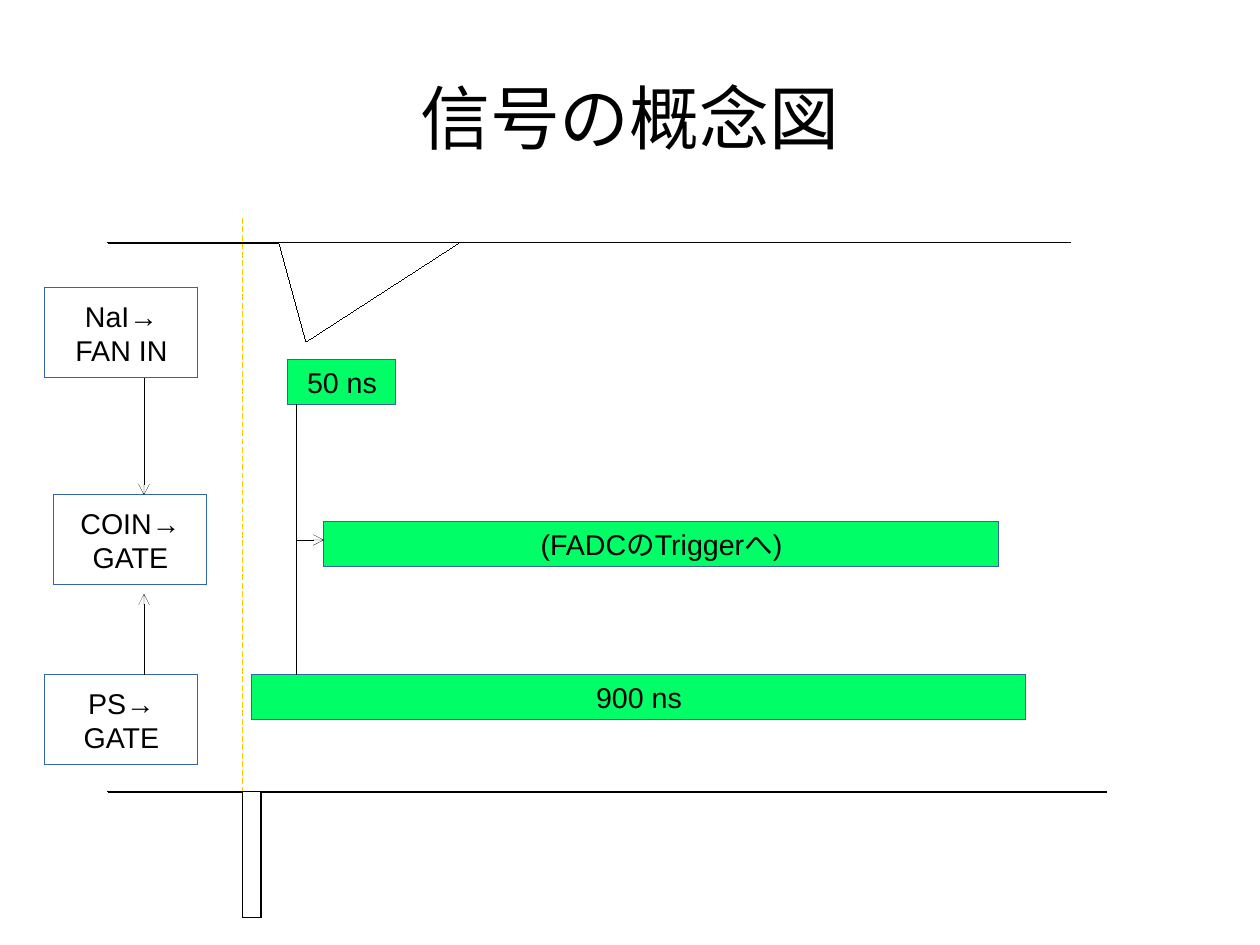
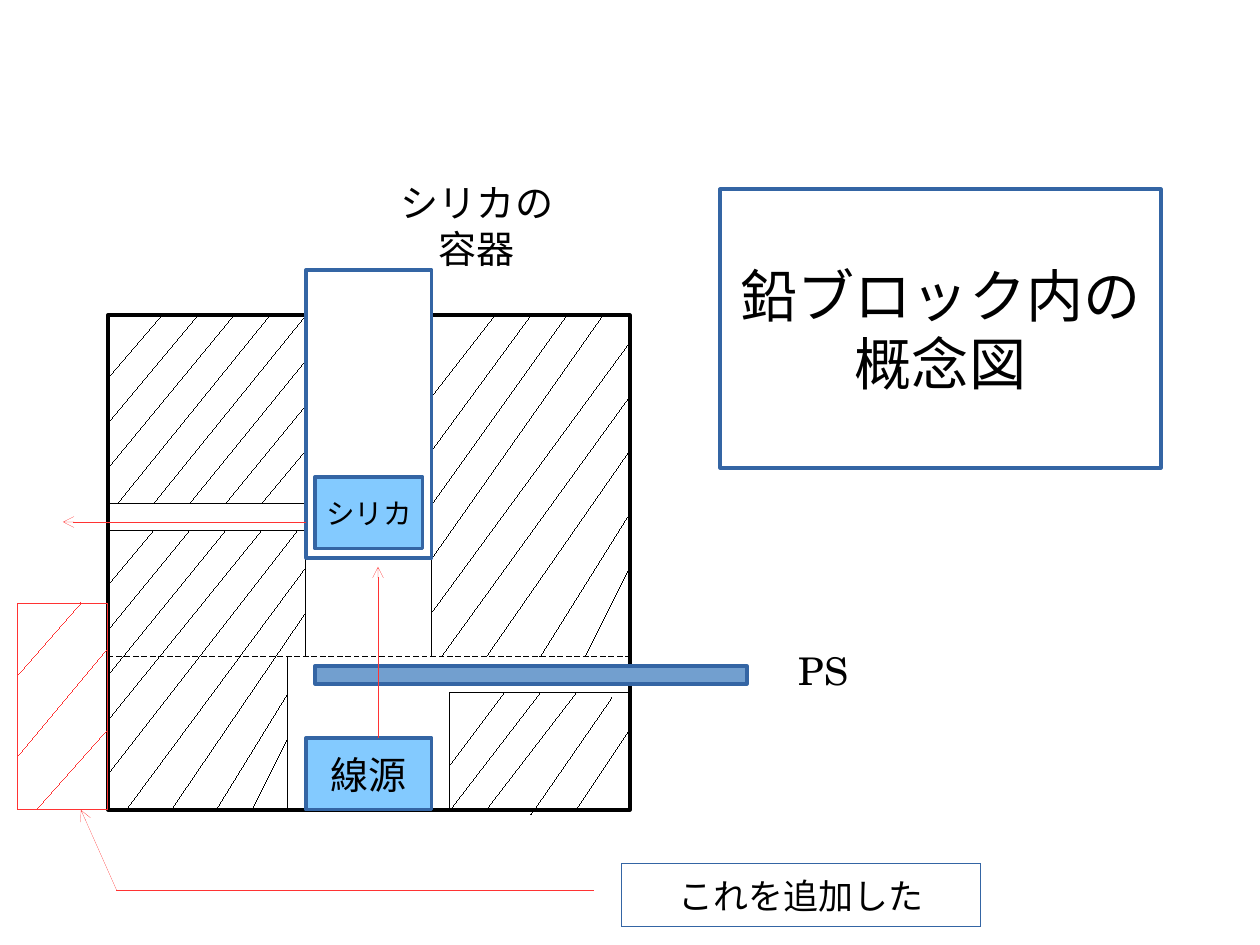
from dataclasses import dataclass

from lxml import etree
from pptx import Presentation
from pptx.dml.color import RGBColor
from pptx.enum.dml import MSO_LINE
from pptx.enum.shapes import MSO_CONNECTOR, MSO_SHAPE
from pptx.enum.text import MSO_ANCHOR, MSO_AUTO_SIZE, PP_ALIGN
from pptx.oxml.ns import qn
from pptx.util import Pt

GRID = 5.67  # drawing grid in points; both slides are laid out on it


@dataclass(frozen=True)
class Theme:
    black: str = "000000"
    white: str = "FFFFFF"
    border: str = "3465A4"
    gate: str = "00FF66"
    timing: str = "FFCC00"
    sample: str = "83CAFF"
    scintillator: str = "729FCF"
    added: str = "FF3333"
    sans: str = "Arial"
    serif: str = "TeX Gyre Schola"
    title: int = 44
    heading: int = 36
    label: int = 24
    note: int = 22
    body: int = 18
    hair: float = 0.01
    pulse: float = 1.5
    outline: float = 2


THEME = Theme()


def grid(*units):
    return [Pt(GRID * u) for u in units]


def write(tf, text, size=THEME.body, font=THEME.sans, color=THEME.black, wrap=False):
    """Fill a text frame with centred text, one paragraph per line."""
    tf.auto_size = MSO_AUTO_SIZE.NONE
    tf.word_wrap = wrap
    tf.vertical_anchor = MSO_ANCHOR.MIDDLE
    tf.margin_left = tf.margin_top = tf.margin_right = tf.margin_bottom = 0
    for i, line in enumerate(text.split("\n")):
        p = tf.paragraphs[0] if i == 0 else tf.add_paragraph()
        p.alignment = PP_ALIGN.CENTER
        r = p.add_run()
        r.text = line
        r.font.size = Pt(size)
        r.font.name = font
        r.font.color.rgb = RGBColor.from_string(color)


class Deck:
    """The presentation, its theme and the slide being drawn."""

    def __init__(self, theme):
        self.theme = theme
        self.prs = Presentation()
        self.prs.slide_width, self.prs.slide_height = grid(140, 105)
        self.s = None

    def new_slide(self):
        self.s = self.prs.slides.add_slide(self.prs.slide_layouts[5])

    def paint(self, sp, fill, line, width):
        if fill:
            sp.fill.solid()
            sp.fill.fore_color.rgb = RGBColor.from_string(fill)
        else:
            sp.fill.background()
        if line:
            sp.line.color.rgb = RGBColor.from_string(line)
            sp.line.width = Pt(width)
        else:
            sp.line.fill.background()

    def title(self, text, x, y, w, h, line=None, **fmt):
        sp = self.s.shapes.title
        sp.left, sp.top, sp.width, sp.height = grid(x, y, w, h)
        self.paint(sp, None, line, self.theme.outline)
        write(sp.text_frame, text, wrap=True, **fmt)

    def box(self, x, y, w, h, text="", fill=None, line=THEME.border,
            width=THEME.hair, **fmt):
        sp = self.s.shapes.add_shape(MSO_SHAPE.RECTANGLE, *grid(x, y, w, h))
        sp.shadow.inherit = False
        self.paint(sp, fill, line, width)
        if text:
            write(sp.text_frame, text, **fmt)

    def label(self, x, y, w, h, text, **fmt):
        sp = self.s.shapes.add_textbox(*grid(x, y, w, h))
        write(sp.text_frame, text, **fmt)

    def line(self, x1, y1, x2, y2, color=THEME.black, width=THEME.hair,
             arrow=False, dashed=False):
        cx = self.s.shapes.add_connector(MSO_CONNECTOR.STRAIGHT, *grid(x1, y1, x2, y2))
        cx.line.color.rgb = RGBColor.from_string(color)
        cx.line.width = Pt(width)
        if dashed:
            cx.line.dash_style = MSO_LINE.DASH
        if arrow:
            etree.SubElement(cx.line._get_or_add_ln(), qn("a:tailEnd"), type="arrow")
        etree.SubElement(cx._element.spPr, qn("a:effectLst"))

    def lines(self, segments, **style):
        for segment in segments:
            self.line(*segment, **style)


def signal_slide(d):
    t = d.theme
    d.new_slide()
    d.title("信号の概念図", 7, 4.2, 126, 17.5, size=t.title)

    upper, lower, bottom = 27, 88, 102
    d.lines([
        (12, upper, 119, upper), (31, upper, 34, 38), (34, 38, 51, upper),
        (12, lower, 123, lower), (27, lower, 27, bottom), (27, bottom, 29, bottom),
    ])
    d.line(27, lower, 27, 24, color=t.timing, dashed=True)
    d.lines([
        (12, upper, 31, upper), (12, lower, 27, lower),
        (29, bottom, 29, lower), (29, lower, 123, lower),
    ], width=t.pulse)

    for x, y, w, text in [(28, 75, 86, "900 ns"), (32, 40, 12, "50 ns"),
                          (36, 58, 75, "(FADCのTriggerへ)")]:
        d.box(x, y, w, 5, text, fill=t.gate)
    d.line(33, 45, 33, 75)

    for x, y, text in [(5, 32, "NaI→\nFAN IN"), (6, 55, "COIN→\nGATE"),
                       (5, 75, "PS→\nGATE")]:
        d.box(x, y, 17, 10, text)
    d.lines([(33, 60, 36, 60), (16, 75, 16, 66), (16, 42, 16, 55)], arrow=True)


def lead_block_slide(d):
    t = d.theme
    left, right, top, bottom = 12, 70, 35, 90
    well_left, well_right, joint = 34, 48, 73
    slit_top, slit_bottom, shelf = 56, 59, 77
    d.new_slide()
    d.title("鉛ブロック内の\n概念図", 80, 21, 49, 31, line=t.border,
            size=t.heading, font=t.serif)
    d.label(42, 18, 22, 14, "シリカの\n容器", size=t.label, font=t.serif)
    d.box(left, top, right - left, bottom - top, fill=t.white, line=t.black,
          width=t.outline)

    d.line(left, joint, right, joint, dashed=True)
    d.box(35, 74, 48, 2, fill=t.scintillator, width=t.outline)
    cavity_walls = [
        (well_left, top, well_left, slit_top), (well_left, slit_bottom, well_left, joint),
        (well_right, top, well_right, joint), (32, joint, 32, bottom),
        (left, slit_top, well_left, slit_top), (left, slit_bottom, well_left, slit_bottom),
        (50, shelf, right, shelf), (50, shelf, 50, bottom),
    ]
    upper_left = [
        (18, top, left, 42), (22, top, left, 47), (26, top, left, 52),
        (30, top, 13, slit_top), (34, top, 17, slit_top), (34, 40, 21, slit_top),
        (34, 45, 25, slit_top), (34, 50, 29, slit_top),
    ]
    upper_right = [
        (55, top, well_right, 44), (59, top, well_right, 50), (63, top, well_right, 56),
        (67, top, well_right, 62), (right, 38, well_right, 68), (right, 44, 49, joint),
        (right, 50, 54, joint), (right, 57, 60, joint), (right, 63, 65, joint),
    ]
    lower_right = [
        (56, shelf, 50, 85), (60, shelf, 50, bottom), (64, shelf, 54, bottom),
        (68, 77.5, 59, 90.5), (right, 81, 64, bottom),
    ]
    lower_left = [
        (17, slit_bottom, left, 65), (21, slit_bottom, left, 70),
        (25, slit_bottom, left, 75), (29, slit_bottom, left, 80),
        (33, slit_bottom, left, 86), (34, 63, 14, bottom), (34, 68, 19, bottom),
        (32, 77, 24, bottom), (32, 82, 28, bottom),
    ]
    d.lines(cavity_walls + upper_left + upper_right + lower_right + lower_left)

    well_width = well_right - well_left
    d.box(well_left, 82, well_width, 8, "線源", fill=t.sample, width=t.outline,
          size=t.label, font=t.serif)
    d.box(well_left, 30, well_width, 32, fill=t.white, width=t.outline)
    d.box(35, 53, 12, 8, "シリカ", fill=t.sample, width=t.outline, font=t.serif)
    d.label(84, 70, 15, 9, "PS", size=t.label, font=t.serif)

    d.box(2, 67, 10, 23, line=t.added)
    d.lines([(9, 67, 2, 75), (12, 72, 2, 84), (12, 81, 4, bottom), (13, 99, 66, 99)],
            color=t.added)
    d.lines([(34, 58, 7, 58), (42, 82, 42, 63), (13, 99, 9, bottom)],
            color=t.added, arrow=True)
    d.box(69, 96, 40, 7, "これを追加した", size=t.note)


def main():
    d = Deck(THEME)
    signal_slide(d)
    lead_block_slide(d)
    d.prs.save("out.pptx")


if __name__ == "__main__":
    main()
